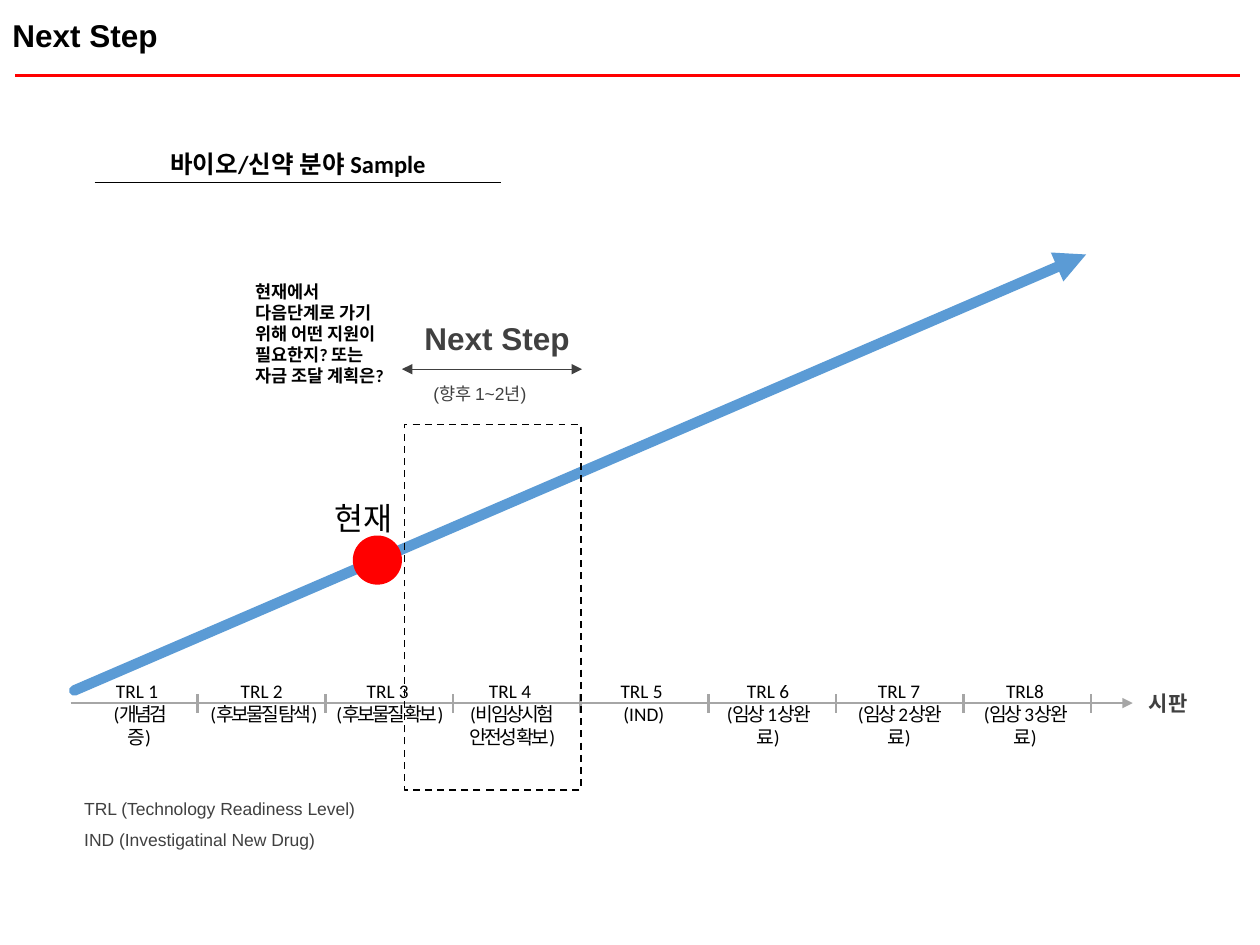
from lxml import etree
from pptx import Presentation
from pptx.dml.color import RGBColor
from pptx.enum.dml import MSO_LINE
from pptx.enum.shapes import MSO_CONNECTOR, MSO_SHAPE
from pptx.enum.text import MSO_ANCHOR, MSO_AUTO_SIZE, PP_ALIGN
from pptx.oxml.ns import qn
from pptx.util import Inches, Pt

STRAIGHT = MSO_CONNECTOR.STRAIGHT
RECT, OVAL = MSO_SHAPE.RECTANGLE, MSO_SHAPE.OVAL
TOP, MIDDLE = MSO_ANCHOR.TOP, MSO_ANCHOR.MIDDLE
LEFT, CENTER = PP_ALIGN.LEFT, PP_ALIGN.CENTER
FIT, FIXED = MSO_AUTO_SIZE.SHAPE_TO_FIT_TEXT, MSO_AUTO_SIZE.NONE
DASH = MSO_LINE.DASH
RED = RGBColor(0xFF, 0x00, 0x00)
BLUE = RGBColor(0x5B, 0x9B, 0xD5)
BLACK = RGBColor(0x00, 0x00, 0x00)
DARK = RGBColor(0x40, 0x40, 0x40)
GRAY = RGBColor(0xA6, 0xA6, 0xA6)

# Content: stage labels as (left, width, height, lines)
STAGES = [
    (0.71, 0.79, 0.47, ["TRL 1 ", "(개념검증)"]),
    (1.56, 1.07, 0.47, ["TRL 2 ", "(후보물질 탐색)"]),
    (2.56, 1.07, 0.47, ["TRL 3 ", "(후보물질 확보)"]),
    (3.61, 0.91, 0.66, ["TRL 4 ", "(비임상시험", "안전성 확보)"]),
    (4.82, 0.58, 0.47, ["TRL 5 ", "(IND)"]),
    (5.59, 1.01, 0.47, ["TRL 6", "(임상 1상 완료)"]),
    (6.63, 1.01, 0.47, ["TRL 7", "(임상 2상 완료)"]),
    (7.63, 1.01, 0.47, ["TRL8", "(임상 3상 완료)"]),
]
LEGEND = ["TRL (Technology Readiness Level)", "IND (Investigatinal New Drug)"]
QUESTION = "현재에서 다음단계로 가기 위해 어떤 지원이 필요한지? 또는 자금 조달 계획은?"

# Text formats
ARIAL = {"name": "Arial", "color": DARK}
CALIBRI = {"name": "Calibri", "color": BLACK}
TITLE = {"name": "Arial", "color": BLACK, "size": Pt(18), "bold": True}
STEP = {**TITLE, "color": DARK}
NOTE = {**ARIAL, "size": Pt(10)}
MARKET = {**ARIAL, "size": Pt(12), "bold": True}
STAGE = {**CALIBRI, "size": Pt(11)}
FIELD = {**CALIBRI, "size": Pt(14), "bold": True}
ASK = {**CALIBRI, "size": Pt(10), "bold": True}
NOW = {**CALIBRI, "size": Pt(18)}

AXIS_Y, TICK_TOP, TICK_BOTTOM = 5.58, 5.51, 5.66
FIRST_TICK, LAST_TICK = 1.57, 8.66
TICK_GAP = (LAST_TICK - FIRST_TICK) / (len(STAGES) - 1)

prs = Presentation()
prs.slide_width, prs.slide_height = Inches(10), Inches(7.5)
s = prs.slides.add_slide(prs.slide_layouts[6])


def add_text(box, lines, fmt, align=LEFT, anchor=TOP, before=0, hanging=0, tight=False):
    shape = s.shapes.add_textbox(*map(Inches, box))
    tf = shape.text_frame
    tf.word_wrap = True
    tf.auto_size = FIT if anchor == TOP else FIXED
    tf.vertical_anchor = anchor
    for i, line in enumerate(lines):
        p = tf.paragraphs[0] if i == 0 else tf.add_paragraph()
        p.alignment = align
        p.space_before = Pt(before)
        if hanging:
            pPr = p._p.get_or_add_pPr()
            pPr.set("marL", str(Inches(hanging)))
            pPr.set("indent", str(-Inches(hanging)))
        r = p.add_run()
        r.text = line
        for key, value in fmt.items():
            if key == "color":
                r.font.color.rgb = value
            else:
                setattr(r.font, key, value)
        if tight and i > 0:
            r._r.get_or_add_rPr().set("spc", "-150")


def add_line(x1, y1, x2, y2, color, width, heads=(), cap=None):
    c = s.shapes.add_connector(STRAIGHT, *map(Inches, (x1, y1, x2, y2)))
    c.line.color.rgb = color
    c.line.width = Pt(width)
    ln = c.line._get_or_add_ln()
    if cap:
        ln.set("cap", cap)
    for end in heads:
        etree.SubElement(ln, qn("a:" + end)).set("type", "triangle")
    etree.SubElement(c._element.spPr, qn("a:effectLst"))


def add_shape(kind, box):
    sp = s.shapes.add_shape(kind, *map(Inches, box))
    sp.shadow.inherit = False
    return sp


# Header rule and abbreviations
add_line(0.12, 0.6, 9.84, 0.6, RED, 1.5)
add_text((0.57, 6.26, 3.41, 0.56), LEGEND, NOTE, anchor=MIDDLE, before=6, hanging=0.19)

# Stage axis with ticks and labels
add_line(0.56, AXIS_Y, 8.99, AXIS_Y, GRAY, 1.5, ["tailEnd"])
for i, (left, width, height, lines) in enumerate(STAGES):
    x = FIRST_TICK + i * TICK_GAP
    add_line(x, TICK_TOP, x, TICK_BOTTOM, GRAY, 1.5)
    add_text((left, 5.34, width, height), lines, STAGE, CENTER, tight="(IND)" not in lines)
add_text((9.02, 5.3, 0.64, 0.56), ["시판"], MARKET, anchor=MIDDLE, before=6)

# Growth arrow and next-step window
add_line(0.59, 5.48, 8.62, 2.02, BLUE, 6, ["tailEnd"], cap="rnd")
window = add_shape(RECT, (3.21, 3.37, 1.4, 2.9))
window.fill.background()
window.line.color.rgb = BLACK
window.line.width = Pt(1)
window.line.dash_style = DASH
add_text((3.26, 2.48, 1.37, 0.4), ["Next Step"], STEP, CENTER)
add_line(3.19, 2.93, 4.62, 2.93, DARK, 0.5, ["headEnd", "tailEnd"])
add_text((3.34, 2.97, 1.19, 0.31), ["(향후 1~2년)"], NOTE, anchor=MIDDLE, before=6, hanging=0.19)

# Field heading, title and question
add_text((1.19, 1.13, 2.35, 0.34), ["바이오/신약 분야 Sample"], FIELD, CENTER)
add_line(0.75, 1.45, 3.98, 1.45, BLACK, 0.5)
add_text((0, 0.08, 1.39, 0.4), ["Next Step"], TITLE)
add_text((1.93, 2.18, 1.18, 1.28), [QUESTION], ASK)

# Current position
dot = add_shape(OVAL, (2.8, 4.25, 0.39, 0.39))
dot.fill.solid()
dot.fill.fore_color.rgb = RED
dot.line.fill.background()
add_text((2.56, 3.91, 0.71, 0.4), ["현재"], NOW)

prs.save("out.pptx")
